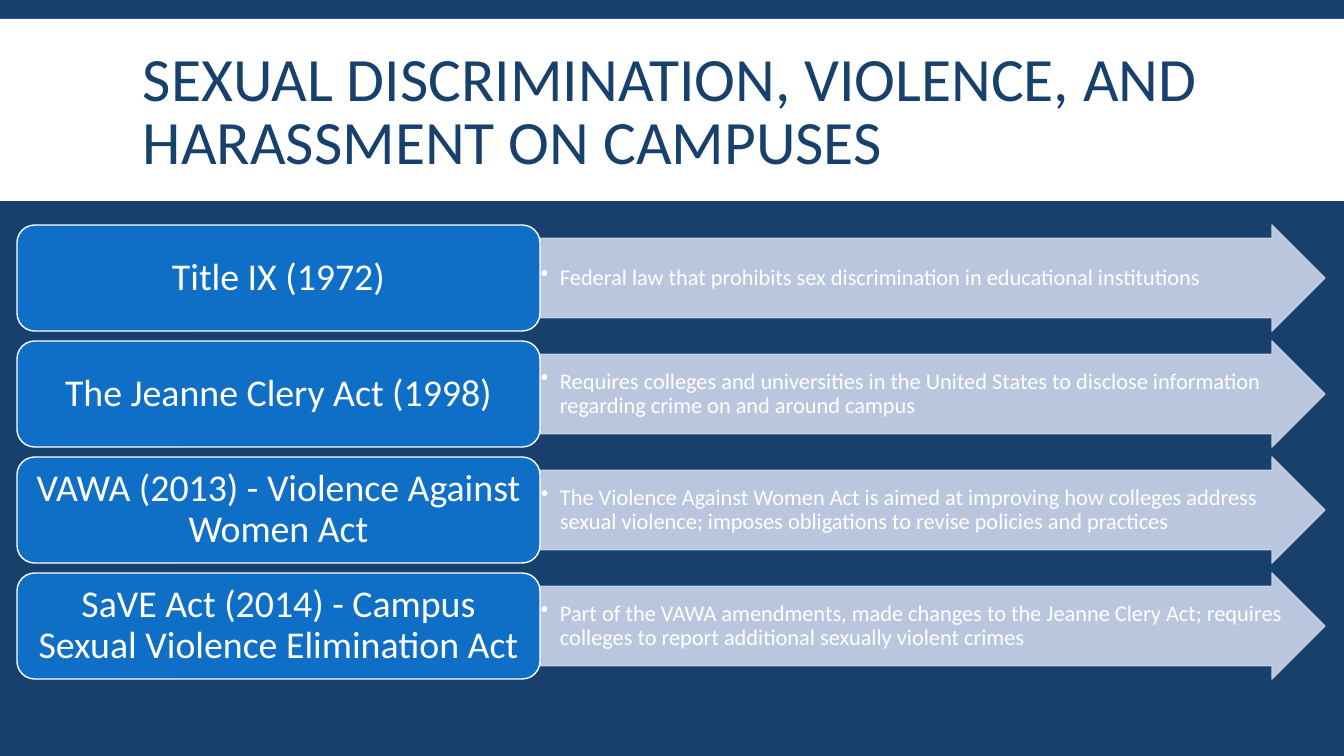
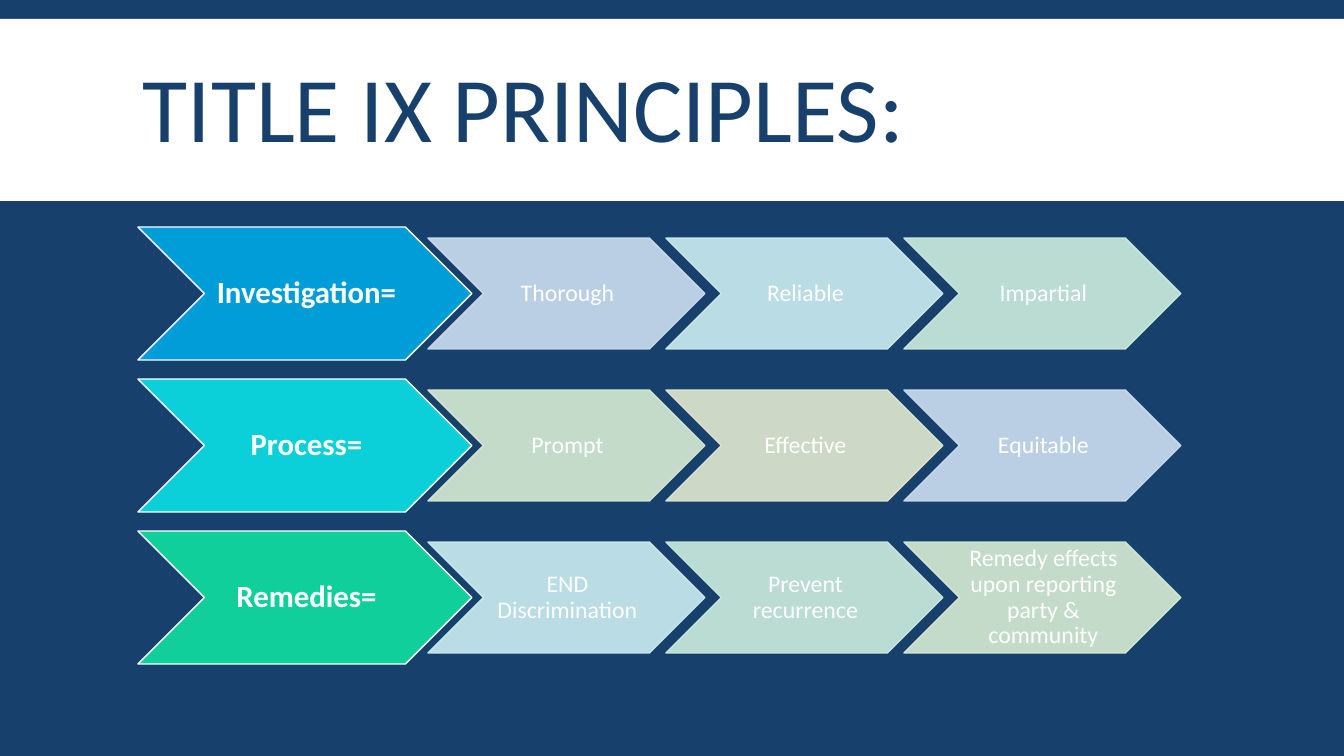
from dataclasses import dataclass

from lxml.etree import SubElement
from pptx import Presentation
from pptx.dml.color import RGBColor
from pptx.enum.shapes import MSO_SHAPE
from pptx.enum.text import MSO_ANCHOR, PP_ALIGN
from pptx.oxml.ns import qn
from pptx.shapes.autoshape import Shape
from pptx.slide import Slide
from pptx.util import Emu, Pt

PX_PER_INCH = 100.8
SLIDE_W, SLIDE_H = 1344, 756


@dataclass(frozen=True)
class Theme:
    font: str = "Calibri"
    navy: str = "17406D"
    white: str = "FFFFFF"
    blue: str = "0F6FC6"
    sky: str = "009DD9"
    cyan: str = "0BD0D9"
    green: str = "10CF9B"
    pale_periwinkle: str = "CCD5EA"
    pale_blue: str = "CCDFF1"
    pale_cyan: str = "CCEEF1"
    pale_mint: str = "CCEDDE"
    pale_green: str = "D7ECD3"
    pale_olive: str = "E1E9D0"
    pale_opacity: int = 90
    law_pt: int = 27
    summary_pt: int = 16
    principle_pt: int = 22
    quality_pt: int = 17


@dataclass(frozen=True)
class Box:
    left: int
    top: int
    width: int
    height: int


@dataclass(frozen=True)
class Law:
    name: str
    summary: str


@dataclass(frozen=True)
class Quality:
    text: str
    color: str


@dataclass(frozen=True)
class Principle:
    name: str
    color: str
    qualities: tuple[Quality, ...]


T = Theme()

LAWS = (
    Law("Title IX (1972)",
        "Federal law that prohibits sex discrimination in educational institutions"),
    Law("The Jeanne Clery Act (1998)",
        "Requires colleges and universities in the United States to disclose "
        "information regarding crime on and around campus"),
    Law("VAWA (2013) - Violence Against Women Act",
        "The Violence Against Women Act is aimed at improving how colleges address "
        "sexual violence; imposes obligations to revise policies and practices"),
    Law("SaVE Act (2014) - Campus Sexual Violence Elimination Act",
        "Part of the VAWA amendments, made changes to the Jeanne Clery Act; requires "
        "colleges to report additional sexually violent crimes"),
)

PRINCIPLES = (
    Principle("Investigation=", T.sky, (
        Quality("Thorough", T.pale_blue),
        Quality("Reliable", T.pale_cyan),
        Quality("Impartial", T.pale_mint))),
    Principle("Process=", T.cyan, (
        Quality("Prompt", T.pale_green),
        Quality("Effective", T.pale_olive),
        Quality("Equitable", T.pale_blue))),
    Principle("Remedies=", T.green, (
        Quality("END Discrimination", T.pale_cyan),
        Quality("Prevent recurrence", T.pale_mint),
        Quality("Remedy effects upon reporting party & community", T.pale_green))),
)


def px(n: int) -> Emu:
    return Emu(round(n * 914400 / PX_PER_INCH))


def frame(box: Box) -> tuple[Emu, Emu, Emu, Emu]:
    return px(box.left), px(box.top), px(box.width), px(box.height)


def add_block(s: Slide, kind: MSO_SHAPE, box: Box, fill: str,
              line: str | None = None, opacity: int = 100) -> Shape:
    sp = s.shapes.add_shape(kind, *frame(box))
    sp.shadow.inherit = False
    sp.fill.solid()
    sp.fill.fore_color.rgb = RGBColor.from_string(fill)
    if line is None:
        sp.line.fill.background()
    else:
        sp.line.color.rgb = RGBColor.from_string(line)
        sp.line.width = Pt(1)
    if opacity < 100:
        for color in sp._element.spPr.iter(qn("a:srgbClr")):
            SubElement(color, qn("a:alpha")).set("val", str(opacity * 1000))
    return sp


def write(sp: Shape, text: str, *, size: int, color: str = T.white,
          bold: bool = False, align: PP_ALIGN = PP_ALIGN.CENTER,
          spacing: float = 0.9, bullet_indent: int = 0,
          insets: tuple[int, int, int, int] = (10, 5, 10, 5)) -> None:
    """Fill a shape with one paragraph; insets run left, top, right, bottom."""
    tf = sp.text_frame
    tf.word_wrap = True
    tf.vertical_anchor = MSO_ANCHOR.MIDDLE
    tf.margin_left, tf.margin_top, tf.margin_right, tf.margin_bottom = map(px, insets)
    p = tf.paragraphs[0]
    p.alignment = align
    p.line_spacing = spacing
    if bullet_indent:
        ppr = p._p.get_or_add_pPr()
        ppr.set("marL", str(px(bullet_indent)))
        ppr.set("indent", str(-px(bullet_indent)))
        SubElement(ppr, qn("a:buChar")).set("char", "•")
    r = p.add_run()
    r.text = text
    r.font.name = T.font
    r.font.size = Pt(size)
    r.font.bold = bold
    r.font.color.rgb = RGBColor.from_string(color)


def add_titled_slide(prs, title: str, size: int) -> Slide:
    s = prs.slides.add_slide(prs.slide_layouts[6])
    s.background.fill.solid()
    s.background.fill.fore_color.rgb = RGBColor.from_string(T.navy)
    add_block(s, MSO_SHAPE.RECTANGLE, Box(0, 19, SLIDE_W, 182), T.white)
    sp = s.shapes.add_textbox(*frame(Box(133, 31, 1079, 166)))
    write(sp, title, size=size, color=T.navy, align=PP_ALIGN.LEFT, spacing=0.85)
    return s


def add_laws(s: Slide) -> None:
    left, top, name_w, arrow_w, height, gap = 17, 225, 523, 785, 106, 10
    for i, law in enumerate(LAWS):
        y = top + i * (height + gap)
        # Summary arrow
        sp = add_block(s, MSO_SHAPE.RIGHT_ARROW, Box(left + name_w, y, arrow_w, height),
                       T.pale_periwinkle, T.pale_periwinkle, T.pale_opacity)
        sp.adjustments[0] = 0.75
        sp.adjustments[1] = 0.5
        write(sp, law.summary, size=T.summary_pt, align=PP_ALIGN.LEFT,
              bullet_indent=19, insets=(1, 1, 1, 1))
        # Name of the law
        sp = add_block(s, MSO_SHAPE.ROUNDED_RECTANGLE, Box(left, y, name_w, height),
                       T.blue, T.white)
        write(sp, law.name, size=T.law_pt, insets=(11, 6, 11, 6))


def add_principles(s: Slide) -> None:
    top, row_pitch, head_h = 227, 152, 133
    quality_left, quality_pitch, quality_h = 428, 238, 111
    for i, principle in enumerate(PRINCIPLES):
        y = top + i * row_pitch
        # Leading chevron
        sp = add_block(s, MSO_SHAPE.CHEVRON, Box(138, y, 334, head_h),
                       principle.color, T.white)
        write(sp, principle.name, size=T.principle_pt, bold=True, insets=(3, 2, 0, 2))
        # Qualities, centred on the leading chevron
        for j, quality in enumerate(principle.qualities):
            box = Box(quality_left + j * quality_pitch,
                      y + (head_h - quality_h) // 2, 277, quality_h)
            sp = add_block(s, MSO_SHAPE.CHEVRON, box, quality.color, quality.color,
                           T.pale_opacity)
            write(sp, quality.text, size=T.quality_pt, insets=(2, 1, 0, 1))


def main() -> None:
    prs = Presentation()
    prs.slide_width, prs.slide_height = px(SLIDE_W), px(SLIDE_H)
    add_laws(add_titled_slide(
        prs, "SEXUAL DISCRIMINATION, VIOLENCE, AND HARASSMENT ON CAMPUSES", 44))
    add_principles(add_titled_slide(prs, "TITLE IX PRINCIPLES:", 66))
    prs.save("out.pptx")


if __name__ == "__main__":
    main()
